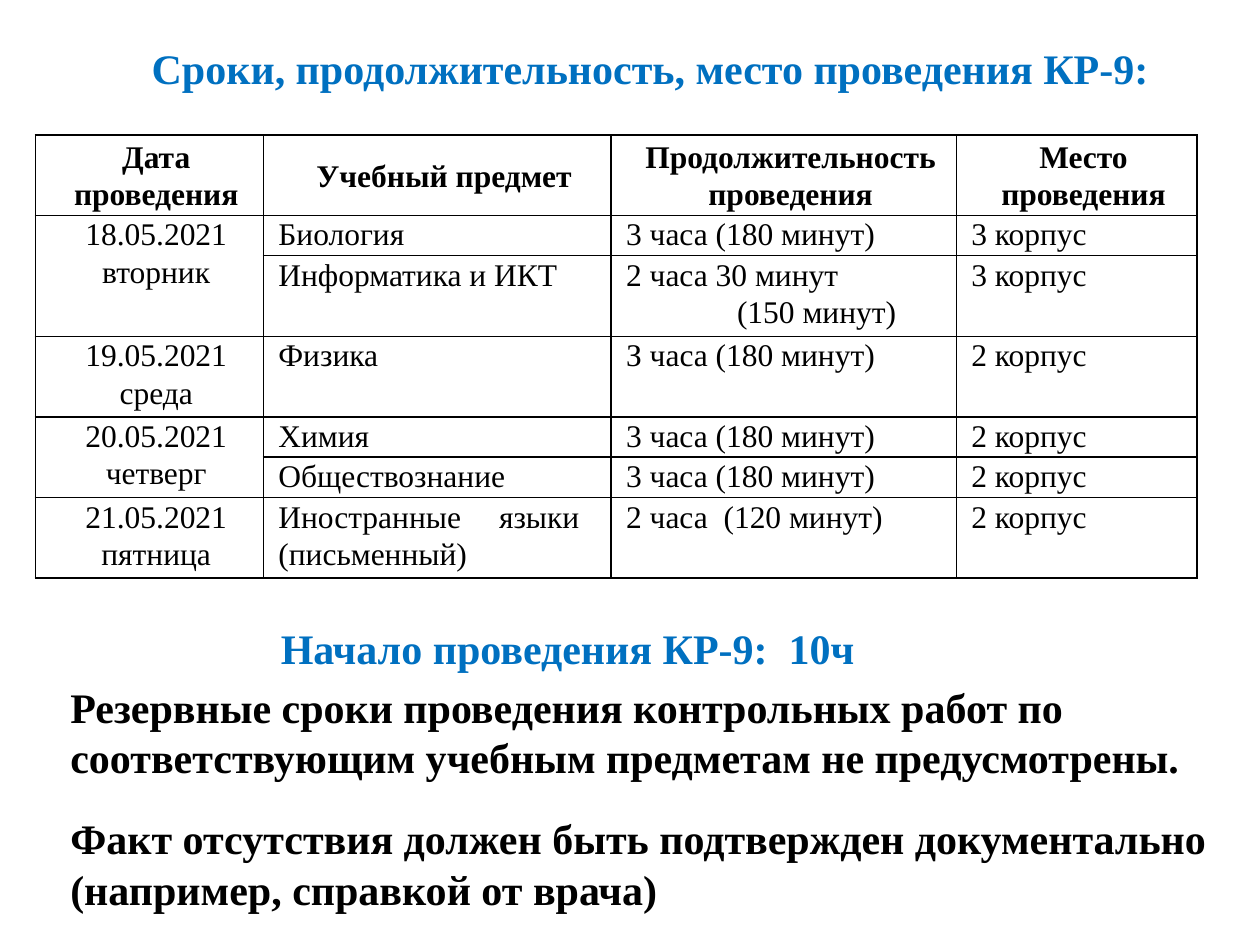
from lxml import etree
from pptx import Presentation
from pptx import util as u
from pptx.dml import color
from pptx.enum import text
from pptx.oxml import ns

BLUE, BLACK = "0070C0", "000000"
LEFT, CENTER, JUSTIFY = text.PP_ALIGN.LEFT, text.PP_ALIGN.CENTER, text.PP_ALIGN.JUSTIFY


def write(frame, wording, size, bold, ink, align=LEFT, spacing=1.0):
    frame.text = wording
    for para in frame.paragraphs:
        para.alignment = align
        para.line_spacing = spacing
        for span in para.runs:
            span.font.color.rgb = color.RGBColor.from_string(ink)
            for name, value in {"name": "Times New Roman", "size": u.Pt(size), "bold": bold}.items():
                setattr(span.font, name, value)


def border(cell, ink, width):
    properties = cell._tc.get_or_add_tcPr()
    for side in ("a:lnL", "a:lnR", "a:lnT", "a:lnB"):
        line = etree.SubElement(properties, ns.qn(side), w=str(u.Pt(width)))
        fill = etree.SubElement(line, ns.qn("a:solidFill"))
        etree.SubElement(fill, ns.qn("a:srgbClr"), val=ink)


deck = Presentation()
deck.slide_width, deck.slide_height = u.Inches(10), u.Inches(7.5)
page = deck.slides.add_slide(deck.slide_layouts[5])

title = page.shapes.title
places = {"left": 0.83, "top": 0.29, "width": 8.66, "height": 0.5}
for name, value in places.items():
    setattr(title, name, u.Inches(value))
title.text_frame.auto_size = text.MSO_AUTO_SIZE.NONE
title.text_frame.vertical_anchor = text.MSO_ANCHOR.TOP
write(title.text_frame, "Сроки, продолжительность, место проведения КР-9:", 24, True, BLUE, CENTER)

schedule = [
    ["Дата проведения", "Учебный предмет", "Продолжительность проведения", "Место проведения"],
    ["18.05.2021 вторник", "Биология", "3 часа (180 минут)", "3 корпус"],
    ["", "Информатика и ИКТ", "2 часа 30 минут\n(150 минут)", "3 корпус"],
    ["19.05.2021 среда", "Физика", "З часа (180 минут)", "2 корпус"],
    ["20.05.2021 четверг", "Химия", "3 часа (180 минут)", "2 корпус"],
    ["", "Обществознание", "3 часа (180 минут)", "2 корпус"],
    ["21.05.2021 пятница", "Иностранные языки (письменный)", "2 часа  (120 минут)", "2 корпус"],
]
widths = [1.81, 2.76, 2.74, 1.91]
single, double = 0.32, 0.64
heights = [double, single, double, double, single, single, double]

table = page.shapes.add_table(
    len(heights), len(widths), u.Inches(0.28), u.Inches(1.07), u.Inches(sum(widths)), u.Inches(sum(heights))
).table
table.first_row = table.horz_banding = False
for column, width in zip(table.columns, widths):
    column.width = u.Inches(width)
for row, height in zip(table.rows, heights):
    row.height = u.Inches(height)

margins = {"margin_left": 0.12, "margin_top": 0, "margin_right": 0.01, "margin_bottom": 0}
for r, entries in enumerate(schedule):
    for c, wording in enumerate(entries):
        cell = table.cell(r, c)
        for name, value in margins.items():
            setattr(cell, name, u.Inches(value))
        cell.vertical_anchor = text.MSO_ANCHOR.TOP if r else text.MSO_ANCHOR.MIDDLE
        border(cell, BLACK, 1)
        cell.fill.background()
        if wording:
            align = CENTER if r == 0 or c == 0 else LEFT
            write(cell.text_frame, wording, 18, r == 0, BLACK, align, 1.07)

for first in (1, 4):
    table.cell(first, 0).merge(table.cell(first + 1, 0))

minutes = table.cell(2, 2).text_frame.paragraphs[1]
minutes._p.get_or_add_pPr().set("marL", str(u.Inches(0.88)))
languages = table.cell(6, 1)
languages.margin_right = u.Inches(0.25)
languages.text_frame.paragraphs[0].alignment = JUSTIFY

notes = [
    (2.13, 4.86, 4.91, 0.5, BLUE, 1.07, "Начало проведения КР-9:  10ч"),
    (0.46, 5.36, 9.06, 0.91, BLACK, 1.0,
     "Резервные сроки проведения контрольных работ по соответствующим учебным предметам не предусмотрены."),
    (0.46, 6.4, 9.26, 0.91, BLACK, 1.0,
     "Факт отсутствия должен быть подтвержден документально (например, справкой от врача)"),
]
for left, top, width, height, ink, spacing, wording in notes:
    box = page.shapes.add_textbox(u.Inches(left), u.Inches(top), u.Inches(width), u.Inches(height))
    box.text_frame.word_wrap = True
    write(box.text_frame, wording, 24, True, ink, LEFT, spacing)

deck.save("out.pptx")
